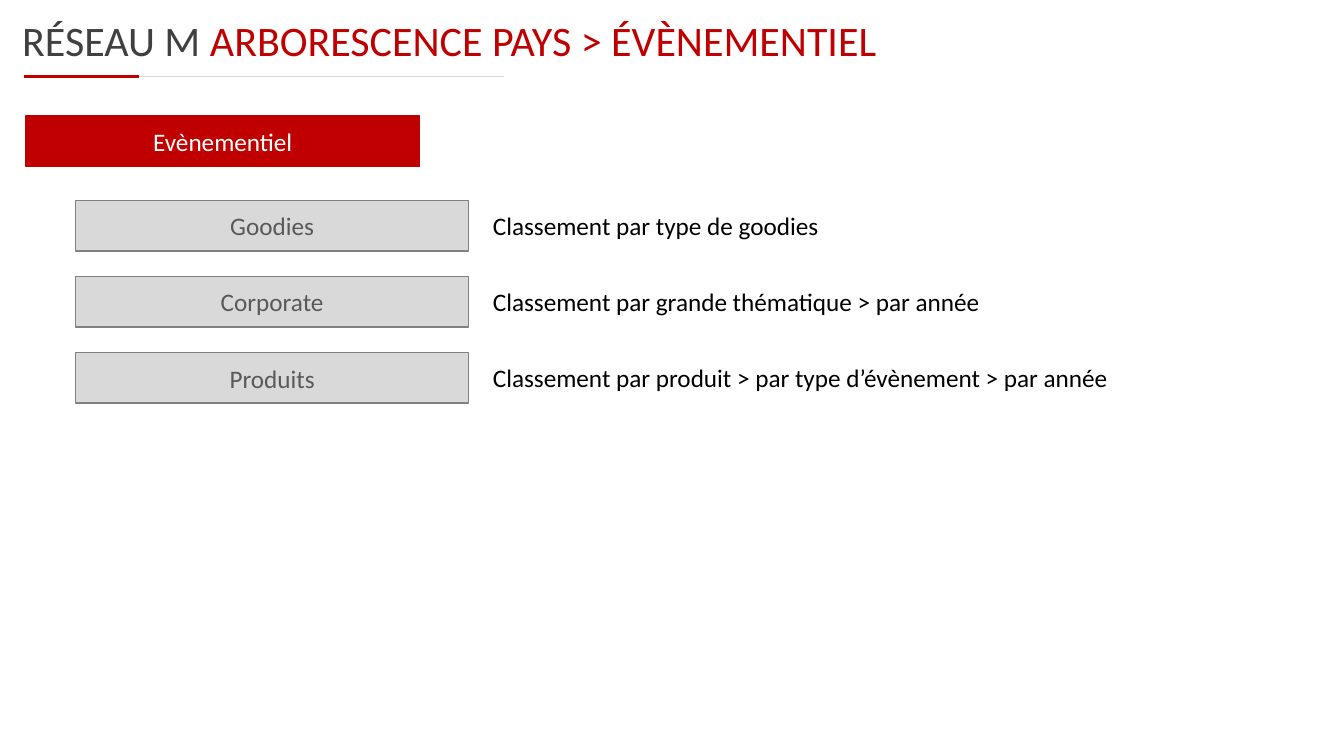
from pptx import Presentation
from pptx.dml.color import RGBColor
from pptx.enum.shapes import MSO_CONNECTOR, MSO_SHAPE
from pptx.enum.text import MSO_ANCHOR, MSO_AUTO_SIZE, PP_ALIGN
from pptx.oxml.ns import qn
from pptx.util import Inches, Pt
from lxml.etree import SubElement

RED = RGBColor(0xC0, 0x00, 0x00)
WHITE = RGBColor(0xFF, 0xFF, 0xFF)
BLACK = RGBColor(0x00, 0x00, 0x00)
TITLE_GREY = RGBColor(0x40, 0x40, 0x40)
LABEL_GREY = RGBColor(0x59, 0x59, 0x59)
BORDER_GREY = RGBColor(0x80, 0x80, 0x80)
LIGHT_GREY = RGBColor(0xD9, 0xD9, 0xD9)

FONT = "Calibri"
FOLDER_LEFT, FOLDER_TOP, FOLDER_PITCH = 0.75, 1.99, 0.755
FOLDERS = [
    ("Goodies", "Classement par type de goodies"),
    ("Corporate", "Classement par grande thématique > par année"),
    ("Produits", "Classement par produit > par type d’évènement > par année"),
]


def set_font(font, size, color):
    font.name = FONT
    font.size = Pt(size)
    font.color.rgb = color


def add_title(slide):
    title = slide.shapes.title
    title.left, title.top = Inches(0.12), Inches(0.09)
    title.width, title.height = Inches(12.72), Inches(1.49)
    frame = title.text_frame
    frame.word_wrap = True
    frame.auto_size = MSO_AUTO_SIZE.NONE
    frame.vertical_anchor = MSO_ANCHOR.TOP
    heading = frame.paragraphs[0]
    heading.alignment = PP_ALIGN.LEFT
    for text, color in (
        ("RÉSEAU M ", TITLE_GREY),
        ("ARBORESCENCE PAYS > ÉVÈNEMENTIEL", RED),
    ):
        run = heading.add_run()
        run.text = text
        set_font(run.font, 30, color)


def add_rule(slide, start, end, color, weight):
    """Draw one stretch of the line under the title."""
    y = Inches(0.76)
    rule = slide.shapes.add_connector(
        MSO_CONNECTOR.STRAIGHT, Inches(start), y, Inches(end), y)
    rule.line.color.rgb = color
    rule.line.width = Pt(weight)
    SubElement(rule._element.spPr, qn("a:effectLst"))


def add_folder(slide, name, left, top, fill, border, text_color):
    folder = slide.shapes.add_shape(
        MSO_SHAPE.RECTANGLE, Inches(left), Inches(top), Inches(3.9), Inches(0.5))
    folder.shadow.inherit = False
    folder.fill.solid()
    folder.fill.fore_color.rgb = fill
    folder.line.color.rgb = border
    folder.line.width = Pt(1)
    frame = folder.text_frame
    frame.vertical_anchor = MSO_ANCHOR.MIDDLE
    label = frame.paragraphs[0]
    label.text = name
    label.alignment = PP_ALIGN.CENTER
    set_font(label.font, 18, text_color)


def add_description(slide, text, top):
    description = slide.shapes.add_textbox(
        Inches(4.79), Inches(top), Inches(6.73), Inches(0.4))
    frame = description.text_frame
    frame.word_wrap = True
    frame.auto_size = MSO_AUTO_SIZE.SHAPE_TO_FIT_TEXT
    paragraph = frame.paragraphs[0]
    paragraph.text = text
    set_font(paragraph.font, 18, BLACK)


def main():
    deck = Presentation()
    deck.slide_width, deck.slide_height = Inches(13.33), Inches(7.5)
    slide = deck.slides.add_slide(deck.slide_layouts[5])

    add_title(slide)
    add_rule(slide, 1.38, 5, LIGHT_GREY, 0.25)
    add_rule(slide, 0.24, 1.38, RED, 2.5)

    add_folder(slide, "Evènementiel", 0.26, 1.15, RED, RED, WHITE)
    for index, (name, sorting) in enumerate(FOLDERS):
        top = FOLDER_TOP + index * FOLDER_PITCH
        add_folder(slide, name, FOLDER_LEFT, top,
                   LIGHT_GREY, BORDER_GREY, LABEL_GREY)
        add_description(slide, sorting, top + 0.05)

    deck.save("out.pptx")


if __name__ == "__main__":
    main()
